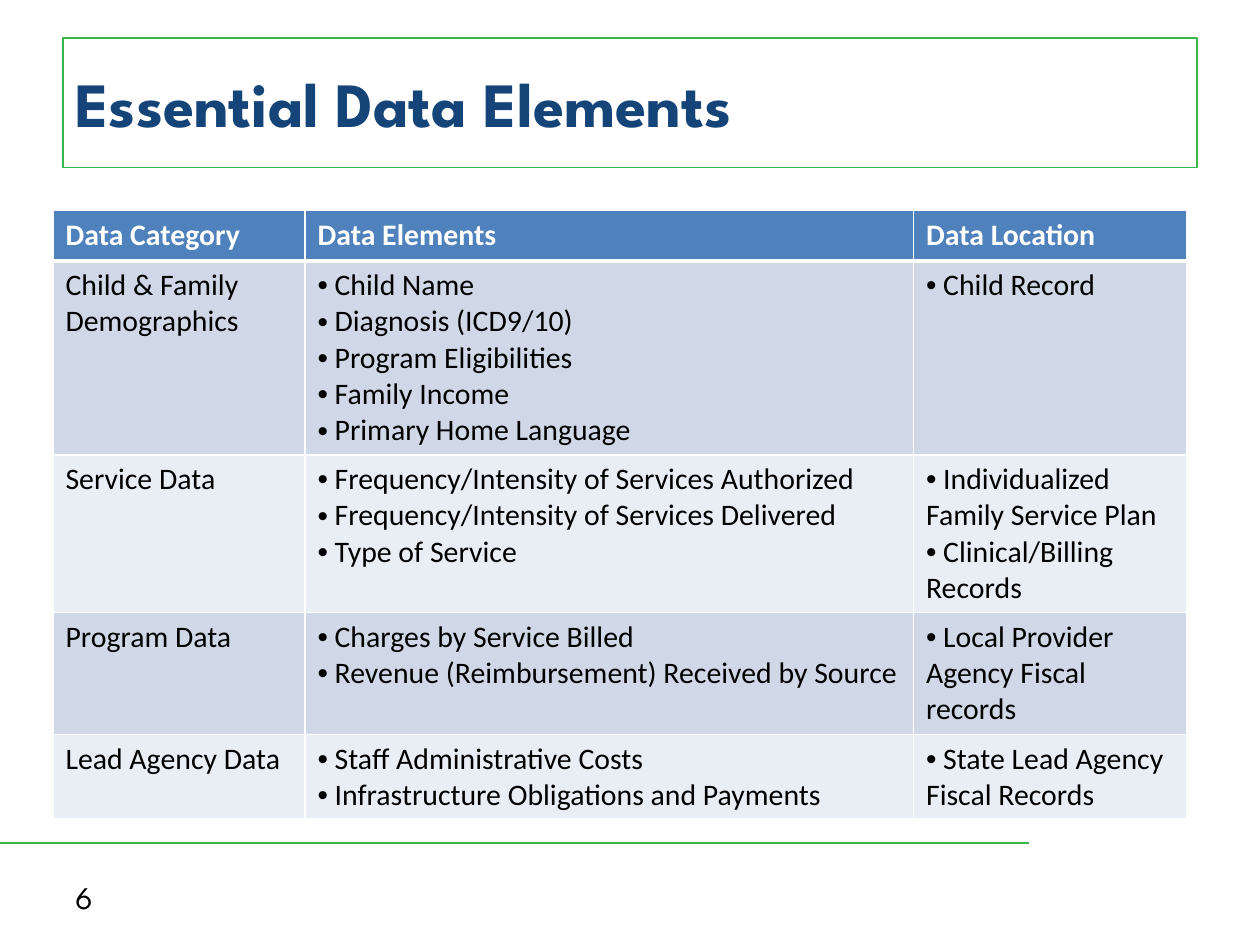
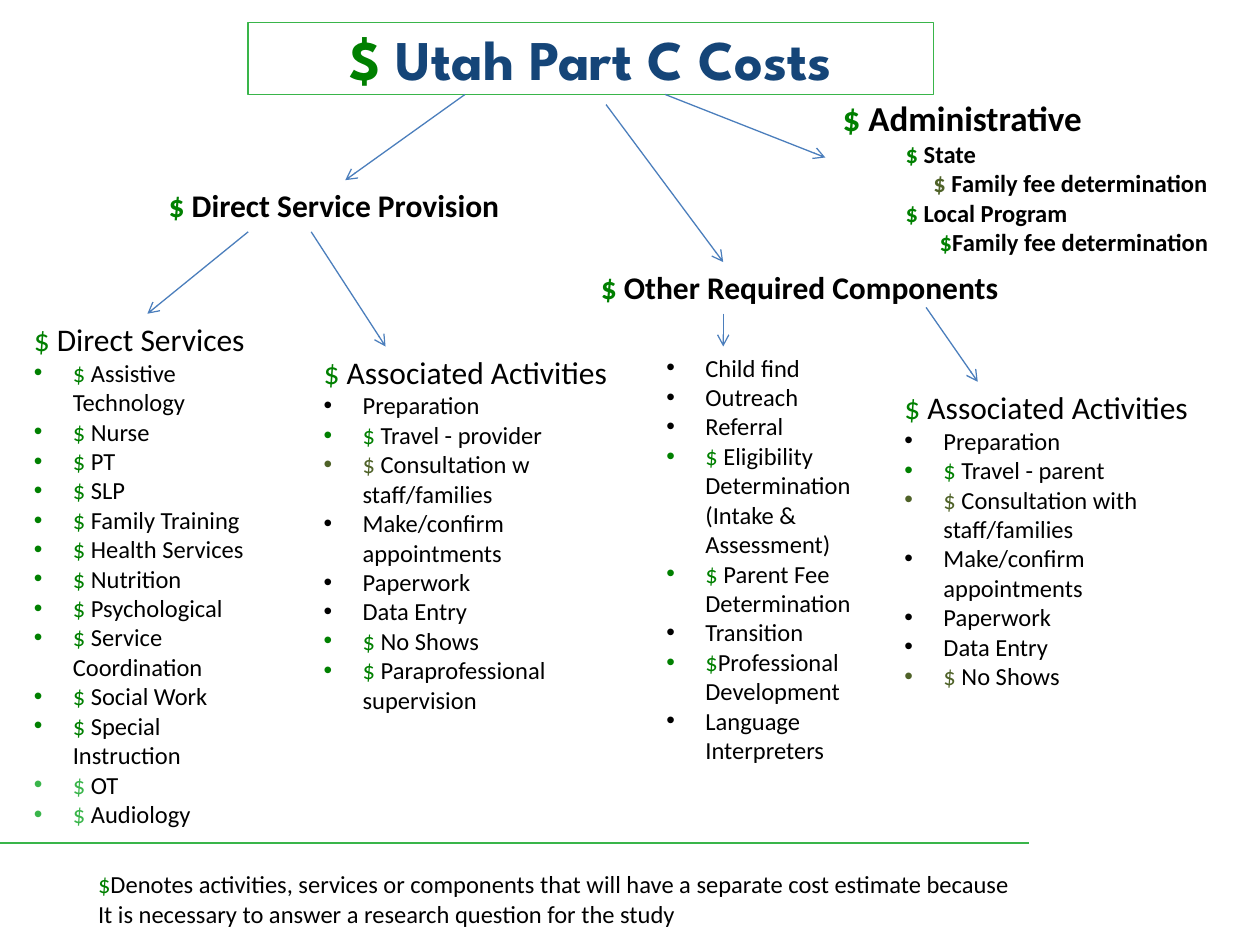
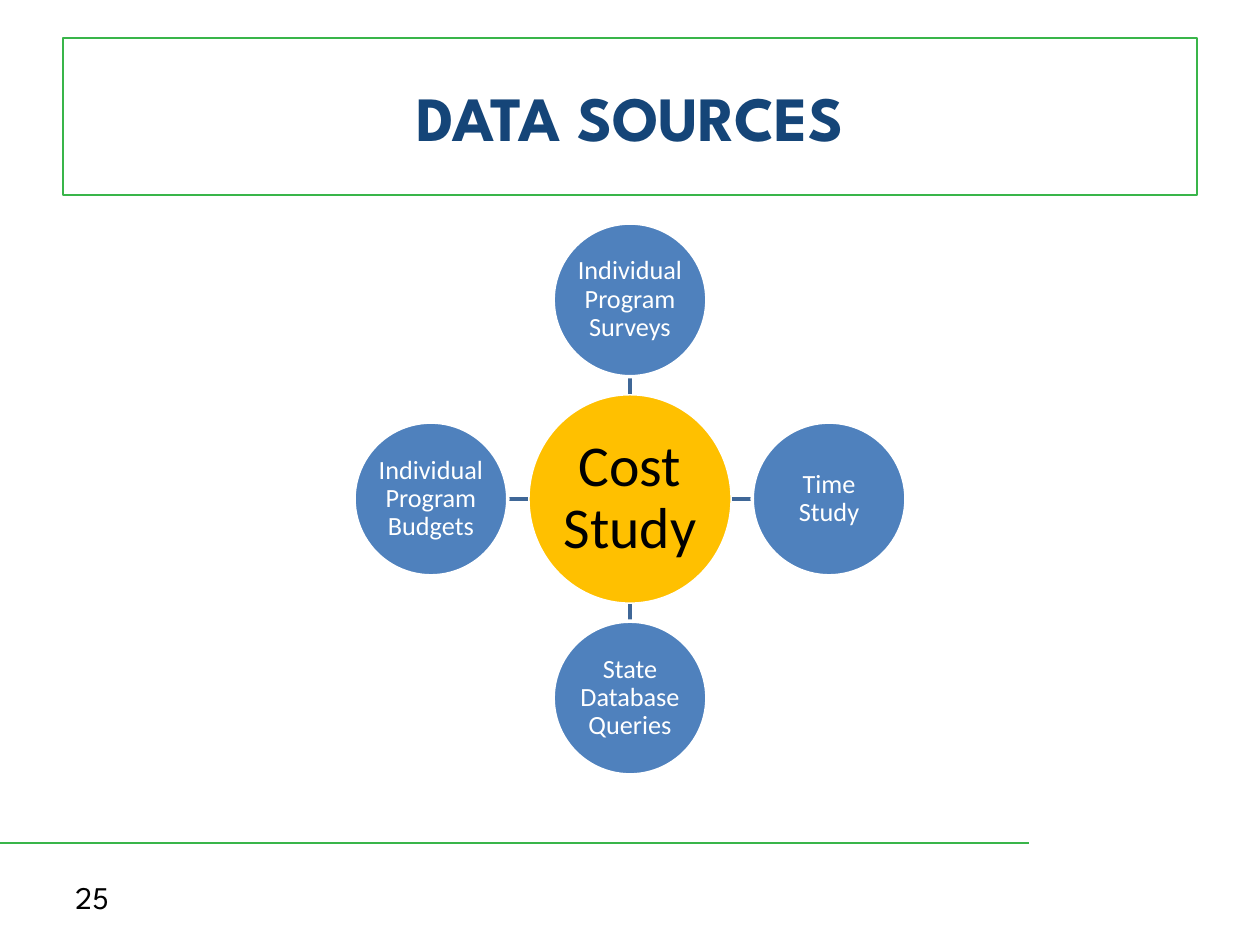
from lxml.etree import SubElement
from pptx import Presentation
from pptx.dml.color import RGBColor
from pptx.enum.shapes import MSO_CONNECTOR, MSO_SHAPE
from pptx.enum.text import MSO_ANCHOR, PP_ALIGN
from pptx.oxml import parse_xml
from pptx.oxml.ns import nsdecls, qn
from pptx.util import Inches, Pt

BLACK = RGBColor(0x00, 0x00, 0x00)
WHITE = RGBColor(0xFF, 0xFF, 0xFF)
NAVY = RGBColor(0x15, 0x45, 0x78)
BRAND_GREEN = RGBColor(0x39, 0xB5, 0x4A)
DOLLAR_GREEN = RGBColor(0x00, 0x80, 0x00)
OLIVE = RGBColor(0x4F, 0x62, 0x28)
BLUE = RGBColor(0x4F, 0x81, 0xBD)
ARROW_BLUE = RGBColor(0x4B, 0x7E, 0xBC)
SPOKE_BLUE = RGBColor(0x3F, 0x67, 0x97)
GOLD = RGBColor(0xFF, 0xC0, 0x00)
DARK_BAND = RGBColor(0xD0, 0xD8, 0xE8)
LIGHT_BAND = RGBColor(0xE9, 0xED, 0xF4)

TITLE_FONT = "League Spartan"
BODY_FONT = "Calibri"

DATA_HEADINGS = ["Data Category", "Data Elements", "Data Location"]
DATA_ROWS = [
    ("Child & Family Demographics",
     ["Child Name", "Diagnosis (ICD9/10)", "Program Eligibilities",
      "Family Income", "Primary Home Language"],
     ["Child Record"]),
    ("Service Data",
     ["Frequency/Intensity of Services Authorized",
      "Frequency/Intensity of Services Delivered", "Type of Service"],
     ["Individualized Family Service Plan", "Clinical/Billing Records"]),
    ("Program Data",
     ["Charges by Service Billed", "Revenue (Reimbursement) Received by Source"],
     ["Local Provider Agency Fiscal records"]),
    ("Lead Agency Data",
     ["Staff Administrative Costs", "Infrastructure Obligations and Payments"],
     ["State Lead Agency Fiscal Records"]),
]
COLUMN_WIDTHS = [2, 4.83, 2.17]
ROW_HEIGHTS = [0.4, 1.54, 1.25, 0.97, 0.67]

COST_LISTS = [
    ((0.17, 2.49, 2, 4.17), "$ Direct Services",
     ["$ Assistive Technology", "$ Nurse", "$ PT", "$ SLP", "$ Family Training",
      "$ Health Services", "$ Nutrition", "$ Psychological",
      "$ Service Coordination", "$ Social Work", "$ Special Instruction",
      ("$ OT", BRAND_GREEN), ("$ Audiology", BRAND_GREEN)]),
    ((2.47, 2.75, 2.5, 3), "$ Associated Activities",
     ["Preparation", "$ Travel - provider",
      ("$ Consultation w staff/families", OLIVE), "Make/confirm appointments",
      "Paperwork", "Data Entry", "$ No Shows", "$ Paraprofessional supervision"]),
    ((5.19, 2.75, 1.99, 3.4), None,
     ["Child find", "Outreach", "Referral",
      "$ Eligibility Determination (Intake & Assessment)",
      "$ Parent Fee Determination", "Transition", "$Professional Development",
      "Language Interpreters"]),
    ((7.08, 3.03, 2.76, 2.52), "$ Associated Activities",
     ["Preparation", "$ Travel - parent",
      ("$ Consultation with staff/families", OLIVE), "Make/confirm appointments",
      "Paperwork", "Data Entry", ("$ No Shows", OLIVE)]),
]
COST_HEADINGS = [
    ((1.24, 1.43, 3.25, 0.4), "$ Direct Service Provision"),
    ((4.67, 2.08, 3.42, 0.4), "$ Other Required Components"),
]
ADMINISTRATIVE_ITEMS = [
    ("$ State", DOLLAR_GREEN, 0.5),
    ("$ Family fee determination", OLIVE, 0.72),
    ("$ Local Program", DOLLAR_GREEN, 0.5),
    ("$Family fee determination", DOLLAR_GREEN, 0.77),
]
COST_ARROWS = [
    ((3.69, 0.75), (2.74, 1.43)),
    ((4.81, 0.83), (5.74, 2.08)),
    ((5.28, 0.75), (6.55, 1.25)),
    ((1.97, 1.84), (1.17, 2.49)),
    ((2.47, 1.84), (3.06, 2.75)),
    ((5.74, 2.49), (5.74, 2.75)),
    ((7.35, 2.44), (7.76, 3.03)),
]
COST_NOTES = [
    "$Denotes activities, services or components that will have a separate cost estimate because",
    "It is necessary to answer a research question for the study",
]

HUB_CENTER = (5, 3.96)
HUB_SIZE = (1.62, 1.67)
SOURCE_DIAMETER = 1.22
SOURCE_DISTANCE = 1.58
SOURCES = [
    ("Individual Program Surveys", 0, -1),
    ("Time Study", 1, 0),
    ("State Database Queries", 0, 1),
    ("Individual Program Budgets", -1, 0),
]


def inches(values):
    return [Inches(value) for value in values]


def format_font(font, size, color, name=BODY_FONT, bold=False):
    font.size = Pt(size)
    font.name = name
    font.bold = bold
    font.color.rgb = color


def format_runs(paragraph, size, color, name=BODY_FONT, bold=False):
    for run in paragraph.runs:
        format_font(run.font, size, color, name, bold)


def write_dollar_text(paragraph, text, size, color=BLACK, dollar=DOLLAR_GREEN,
                      name=BODY_FONT, bold=False):
    rest = text.removeprefix("$")
    if rest != text:
        sign = paragraph.add_run()
        sign.text = "$"
        format_font(sign.font, size, dollar, name, bold)
    run = paragraph.add_run()
    run.text = rest
    format_font(run.font, size, color, name, bold)


def set_indent(paragraph, left, first=0):
    properties = paragraph._p.get_or_add_pPr()
    properties.set("marL", str(Inches(left)))
    properties.set("indent", str(Inches(first)))
    return properties


def add_bullet(paragraph, left=0, first=0):
    properties = set_indent(paragraph, left, first)
    SubElement(properties, qn("a:buFont"), typeface="Arial")
    SubElement(properties, qn("a:buChar"), char="•")


def paragraphs_for(text_frame, items):
    for index, item in enumerate(items):
        paragraph = text_frame.add_paragraph() if index else text_frame.paragraphs[0]
        yield paragraph, item


def add_text_box(slide, box):
    text_frame = slide.shapes.add_textbox(*inches(box)).text_frame
    text_frame.word_wrap = True
    return text_frame


def add_line(slide, start, end, color, width, arrow=False):
    connector = slide.shapes.add_connector(
        MSO_CONNECTOR.STRAIGHT, *inches(start), *inches(end))
    connector.line.color.rgb = color
    connector.line.width = Pt(width)
    if arrow:
        SubElement(connector.line._get_or_add_ln(), qn("a:tailEnd"), type="arrow")
    SubElement(connector._element.spPr, qn("a:effectLst"))


def add_title(slide, text, box, size=36, align=PP_ALIGN.CENTER):
    shape = slide.shapes.add_shape(MSO_SHAPE.RECTANGLE, *inches(box))
    shape.shadow.inherit = False
    shape.fill.background()
    shape.line.color.rgb = BRAND_GREEN
    shape.line.width = Pt(1)
    text_frame = shape.text_frame
    text_frame.word_wrap = True
    text_frame.vertical_anchor = MSO_ANCHOR.MIDDLE
    paragraph = text_frame.paragraphs[0]
    paragraph.alignment = align
    write_dollar_text(paragraph, text, size, NAVY, name=TITLE_FONT, bold=True)


def add_slide(presentation, number=None):
    slide = presentation.slides.add_slide(presentation.slide_layouts[6])
    add_line(slide, (0, 6.69), (8.17, 6.69), BRAND_GREEN, 1.5)
    if number:
        text_frame = add_text_box(slide, (0.5, 6.92, 2.33, 0.4))
        text_frame.vertical_anchor = MSO_ANCHOR.MIDDLE
        text_frame.text = str(number)
        format_runs(text_frame.paragraphs[0], 18, BLACK, TITLE_FONT)
    return slide


def set_borders(cell, top, bottom):
    properties = cell._tc.get_or_add_tcPr()
    widths = {"lnL": 1, "lnR": 1, "lnT": top, "lnB": bottom}
    for position, (tag, width) in enumerate(widths.items()):
        properties.insert(position, parse_xml(
            f'<a:{tag} {nsdecls("a")} w="{Pt(width)}"><a:solidFill>'
            f'<a:srgbClr val="{WHITE}"/></a:solidFill></a:{tag}>'))


def fill_cell(cell, content, fill, row):
    is_header = row == 0
    cell.fill.solid()
    cell.fill.fore_color.rgb = fill
    set_borders(cell, 3 if row == 1 else 1, 3 if is_header else 1)
    bulleted = isinstance(content, list)
    items = content if bulleted else [content]
    for paragraph, item in paragraphs_for(cell.text_frame, items):
        if bulleted:
            add_bullet(paragraph)
        paragraph.text = f" {item}" if bulleted else item
        format_runs(paragraph, 17, WHITE if is_header else BLACK, bold=is_header)


def add_data_table(slide):
    rows = [DATA_HEADINGS, *DATA_ROWS]
    table = slide.shapes.add_table(
        len(rows), len(COLUMN_WIDTHS),
        *inches((0.42, 1.67, sum(COLUMN_WIDTHS), sum(ROW_HEIGHTS)))).table
    for column, width in zip(table.columns, COLUMN_WIDTHS):
        column.width = Inches(width)
    for row, contents in enumerate(rows):
        table.rows[row].height = Inches(ROW_HEIGHTS[row])
        fill = BLUE if row == 0 else DARK_BAND if row % 2 else LIGHT_BAND
        for column, content in enumerate(contents):
            fill_cell(table.cell(row, column), content, fill, row)


def add_cost_list(slide, box, heading, items):
    text_frame = add_text_box(slide, box)
    entries = [heading, *items] if heading else items
    for paragraph, entry in paragraphs_for(text_frame, entries):
        if entry is heading:
            write_dollar_text(paragraph, entry, 18)
            continue
        text, dollar = entry if isinstance(entry, tuple) else (entry, DOLLAR_GREEN)
        add_bullet(paragraph, 0.31, -0.31)
        write_dollar_text(paragraph, text, 14, dollar=dollar)


def add_administrative(slide):
    text_frame = add_text_box(slide, (6.59, 0.72, 3.13, 1.38))
    write_dollar_text(text_frame.paragraphs[0], "$ Administrative", 20, bold=True)
    for text, dollar, left in ADMINISTRATIVE_ITEMS:
        paragraph = text_frame.add_paragraph()
        set_indent(paragraph, left)
        write_dollar_text(paragraph, text, 14, dollar=dollar, bold=True)


def add_circle(slide, text, center, size, fill, text_size, color, inset):
    left, top = (middle - length / 2 for middle, length in zip(center, size))
    shape = slide.shapes.add_shape(MSO_SHAPE.OVAL, *inches((left, top, *size)))
    shape.shadow.inherit = False
    shape.fill.solid()
    shape.fill.fore_color.rgb = fill
    shape.line.color.rgb = WHITE
    shape.line.width = Pt(2)
    text_frame = shape.text_frame
    text_frame.word_wrap = True
    text_frame.vertical_anchor = MSO_ANCHOR.MIDDLE
    text_frame.margin_left = text_frame.margin_right = Inches(inset)
    text_frame.margin_top = text_frame.margin_bottom = Inches(inset)
    text_frame.text = text
    paragraph = text_frame.paragraphs[0]
    paragraph.alignment = PP_ALIGN.CENTER
    paragraph.line_spacing = 0.9
    format_runs(paragraph, text_size, color)


def add_source(slide, text, across, down):
    x, y = HUB_CENTER
    width, height = HUB_SIZE
    reach = SOURCE_DISTANCE - SOURCE_DIAMETER / 2
    add_line(slide, (x + across * width / 2, y + down * height / 2),
             (x + across * reach, y + down * reach), SPOKE_BLUE, 2)
    center = (x + across * SOURCE_DISTANCE, y + down * SOURCE_DISTANCE)
    add_circle(slide, text, center, (SOURCE_DIAMETER, SOURCE_DIAMETER),
               BLUE, 15, WHITE, 0.01)


def build_data_elements(presentation):
    slide = add_slide(presentation, 6)
    add_title(slide, "Essential Data Elements", (0.5, 0.3, 9, 1.03),
              align=PP_ALIGN.LEFT)
    add_data_table(slide)


def build_costs(presentation):
    slide = add_slide(presentation)
    add_title(slide, "$ Utah Part C Costs", (1.97, 0.18, 5.44, 0.57), 32)
    for box, heading, items in COST_LISTS:
        add_cost_list(slide, box, heading, items)
    for start, end in COST_ARROWS:
        add_line(slide, start, end, ARROW_BLUE, 0.75, arrow=True)
    for box, text in COST_HEADINGS:
        paragraph = add_text_box(slide, box).paragraphs[0]
        write_dollar_text(paragraph, text, 18, bold=True)
    add_administrative(slide)
    notes_frame = add_text_box(slide, (0.68, 6.85, 9.17, 0.57))
    for paragraph, note in paragraphs_for(notes_frame, COST_NOTES):
        write_dollar_text(paragraph, note, 14)


def build_data_sources(presentation):
    slide = add_slide(presentation, 25)
    add_title(slide, "DATA SOURCES", (0.5, 0.3, 9, 1.25))
    add_circle(slide, "Cost Study", HUB_CENTER, HUB_SIZE, GOLD, 33, BLACK, 0.02)
    for text, across, down in SOURCES:
        add_source(slide, text, across, down)


def main():
    presentation = Presentation()
    presentation.slide_width = Inches(10)
    presentation.slide_height = Inches(7.5)
    build_data_elements(presentation)
    build_costs(presentation)
    build_data_sources(presentation)
    presentation.save("out.pptx")


if __name__ == "__main__":
    main()
